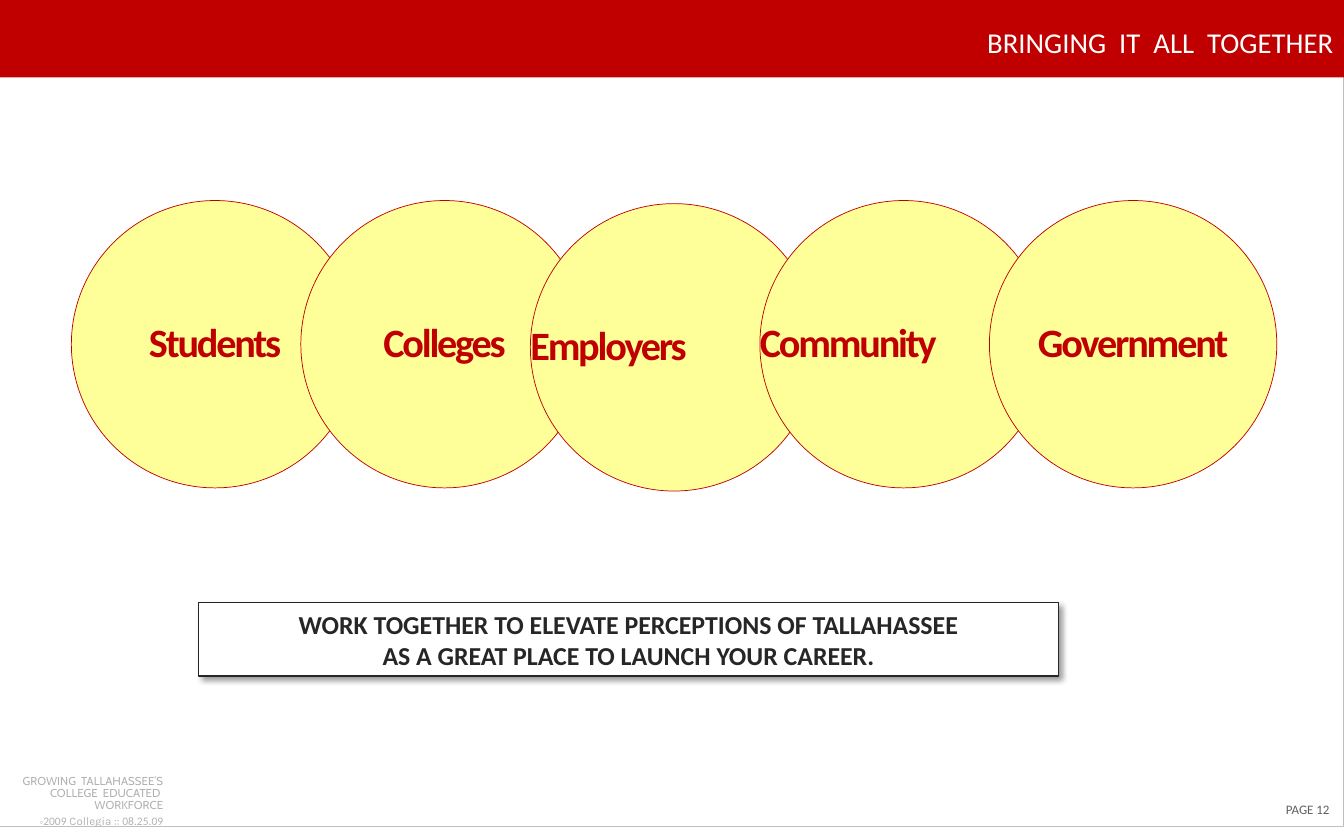
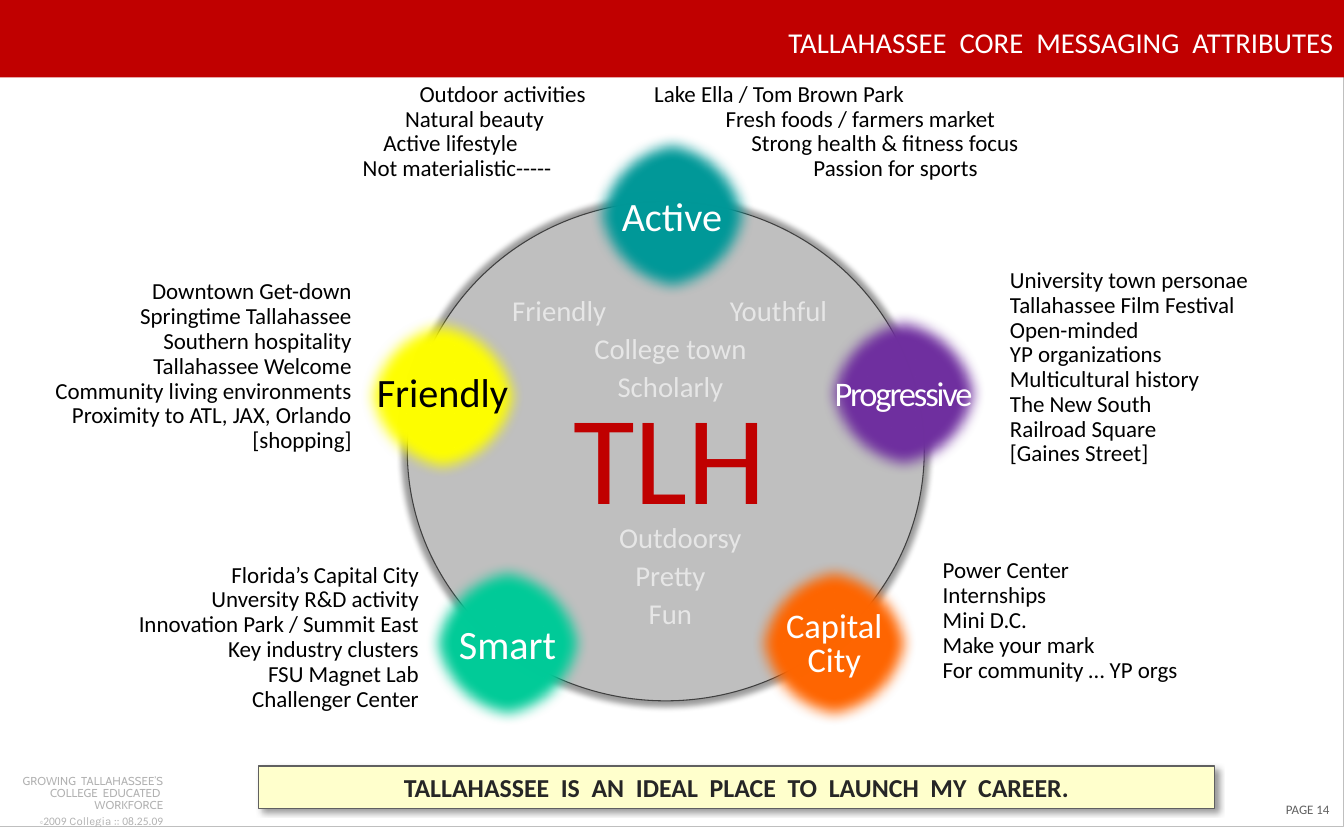
from dataclasses import dataclass

from lxml import etree
from pptx import Presentation
from pptx.dml import color
from pptx.enum import shapes, text
from pptx.oxml import ns
from pptx.util import Inches, Pt


@dataclass(frozen=True)
class Theme:
    font: str = "Calibri"
    red: str = "C00000"
    white: str = "FFFFFF"
    black: str = "000000"
    dark: str = "262626"
    outline: str = "404040"
    grey: str = "606060"
    footer: str = "B2B2B2"
    disc: str = "BFBFBF"
    pale: str = "E6E6E6"
    yellow: str = "FFFF99"
    cream: str = "FFFFCC"
    title_size: int = 20
    large: int = 28
    medium: int = 24
    banner: int = 18
    body: int = 16
    hero: int = 88
    page: int = 9
    small: int = 8
    tiny: int = 6


THEME = Theme()
LEFT, CENTER, RIGHT = text.PP_ALIGN.LEFT, text.PP_ALIGN.CENTER, text.PP_ALIGN.RIGHT
OVAL, RECTANGLE = shapes.MSO_SHAPE.OVAL, shapes.MSO_SHAPE.RECTANGLE
WIDTH, HEIGHT = 13, 8
BAND_HEIGHT = 0.75
CIRCLE_SIZE, CIRCLE_LEFT, CIRCLE_PITCH = 2.78, 0.69, 2.22
BALL_SIZE = 1.6

FOOTER_TITLE = "GROWING  TALLAHASSEE’S COLLEGE  EDUCATED  WORKFORCE"
FOOTER_CREDIT = [
    ("©", "Karla", THEME.tiny, {"baseline": 9000}),
    ("2009", THEME.font, THEME.small, {}),
    (" Collegia :: ", "Karla", THEME.small, {}),
    ("08.25.09", THEME.font, THEME.small, {}),
]

PARTNERS = [
    ("Students", 1.94, CENTER),
    ("Colleges", 1.94, CENTER),
    ("Employers", 1.97, LEFT),
    ("Community", 1.94, LEFT),
    ("Government", 1.94, CENTER),
]
PARTNER_BANNER = [
    "WORK TOGETHER TO ELEVATE PERCEPTIONS OF TALLAHASSEE",
    "AS A GREAT PLACE TO LAUNCH YOUR CAREER.",
]

ATTRIBUTE_LISTS = [
    ((9.67, 2.55, 2.58, 2.1), LEFT, [
        "University town personae", "Tallahassee Film Festival", "Open-minded",
        "YP organizations", "Multicultural history", "The New South",
        "Railroad Square", "[Gaines Street]"]),
    ((0.25, 2.66, 3.25, 1.85), RIGHT, [
        "Downtown Get-down", "Springtime Tallahassee", "Southern hospitality",
        "Tallahassee Welcome", "Community living environments",
        "Proximity to ATL, JAX, Orlando", "[shopping]"]),
    ((9.02, 5.36, 3.08, 1.31), LEFT, [
        "Power Center", "Internships", "Mini D.C.", "Make your mark",
        "For community … YP orgs"]),
    ((3.07, 0.75, 3.08, 1.07), LEFT, [
        ("Outdoor activities", 0.89), ("Natural beauty", 0.75),
        ("Active lifestyle", 0.54), ("Not materialistic-----", 0.34)]),
    ((6.23, 0.75, 4.27, 1.07), LEFT, [
        "Lake Ella / Tom Brown Park", ("Fresh foods / farmers market", 0.69),
        ("Strong health & fitness focus", 0.94), ("Passion for sports", 1.54)]),
    ((1.07, 5.4, 3.08, 1.6), RIGHT, [
        "Florida’s Capital City", "Unversity R&D activity",
        "Innovation Park / Summit East", "Key industry clusters",
        "FSU Magnet Lab", "Challenger Center"]),
]

BALLS = [
    (3.48, 3.03, "FFFF00", ["Friendly"], THEME.black, THEME.large, 0, 0.05),
    (7.94, 3.0, "7030A0", ["Progressive"], THEME.white, THEME.medium, -150, 0.05),
    (5.7, 1.28, "009999", ["Active"], THEME.white, THEME.large, 0, 0.05),
    (4.11, 5.42, "00CC99", ["Smart"], THEME.white, THEME.large, 0, 0.05),
    (7.27, 5.42, "FF6600", ["Capital", "City"], THEME.white, THEME.medium, 0, 0.1),
]

INNER_PAIR = "\tFriendly\tYouthful"
INNER_PAIR_STOPS = (2.65, 4.77)
INNER_WORDS = [
    (2.75, [INNER_PAIR, "College town", "Scholarly"]),
    (4.95, [("Outdoorsy", 0.19), "Pretty", "Fun"]),
]


def rgb(value):
    return color.RGBColor.from_string(value)


def add_run(paragraph, words, size, ink, font=THEME.font, bold=False, **attributes):
    run = paragraph.add_run()
    run.text = words
    run.font.name = font
    run.font.size = Pt(size)
    run.font.bold = bold
    run.font.color.rgb = rgb(ink)
    for name, value in attributes.items():
        run._r.get_or_add_rPr().set(name, str(value))


def set_frame(frame, insets=(0.1, 0.05, 0.1, 0.05), anchor=text.MSO_ANCHOR.TOP, wrap=True):
    frame.margin_left, frame.margin_top, frame.margin_right, frame.margin_bottom = map(Inches, insets)
    frame.vertical_anchor = anchor
    frame.word_wrap = wrap
    frame.auto_size = text.MSO_AUTO_SIZE.NONE


def write(frame, lines, size, ink, align=LEFT, spacing=1.0, **style):
    for index, line in enumerate(lines):
        words, indent = line if isinstance(line, tuple) else (line, 0)
        paragraph = frame.paragraphs[0] if index == 0 else frame.add_paragraph()
        paragraph.alignment = align
        paragraph.line_spacing = spacing
        if indent:
            paragraph._p.get_or_add_pPr().set("marL", str(Inches(indent)))
        add_run(paragraph, words, size, ink, **style)


def add_box(slide, place):
    return slide.shapes.add_textbox(*map(Inches, place)).text_frame


def add_figure(slide, preset, place, fill, line, width):
    shape = slide.shapes.add_shape(preset, *map(Inches, place))
    shape.shadow.inherit = False
    if fill:
        shape.fill.solid()
        shape.fill.fore_color.rgb = rgb(fill)
    else:
        shape.fill.background()
    if line:
        shape.line.color.rgb = rgb(line)
        shape.line.width = Pt(width)
    else:
        shape.line.fill.background()
    return shape


def add_effect(shape, kind, alpha=None, **attributes):
    effects = shape.element.spPr.find(ns.qn("a:effectLst"))
    values = {name: str(value) for name, value in attributes.items()}
    effect = etree.SubElement(effects, ns.qn("a:" + kind), values)
    if alpha:
        ink = etree.SubElement(effect, ns.qn("a:srgbClr"), val=THEME.black)
        etree.SubElement(ink, ns.qn("a:alpha"), val=str(alpha * 1000))


def add_banner(slide, place, fill, line, lines):
    banner = add_figure(slide, RECTANGLE, place, fill, line, 0.75)
    add_effect(banner, "outerShdw", alpha=40, blurRad=Pt(4), dist=Pt(3),
               dir=45 * 60000, algn="tl", rotWithShape=0)
    set_frame(banner.text_frame, anchor=text.MSO_ANCHOR.MIDDLE)
    write(banner.text_frame, lines, THEME.banner, THEME.dark, CENTER, bold=True)


def build_layout(slide):
    existing = len(slide.shapes)
    add_figure(slide, RECTANGLE, (0, 0, WIDTH, HEIGHT), None, THEME.disc, 0.75)
    add_figure(slide, RECTANGLE, (0, 0, WIDTH, BAND_HEIGHT), THEME.red, None, 0)
    footer = add_box(slide, (0, 7.45, 1.58, 0.51))
    set_frame(footer, (0, 0.05, 0, 0.05))
    write(footer, [FOOTER_TITLE], THEME.small, THEME.footer, RIGHT, 0.9, font="Cabin")
    credit = footer.add_paragraph()
    credit.alignment = RIGHT
    credit.line_spacing = 0.9
    credit.space_before = Pt(2.4)
    for words, font, size, attributes in FOOTER_CREDIT:
        add_run(credit, words, size, THEME.footer, font, **attributes)
    for shape in list(slide.shapes)[existing:]:
        slide.slide_layout.shapes.element.append(shape.element)


def start_slide(presentation, title, page):
    slide = presentation.slides.add_slide(presentation.slide_layouts[5])
    if len(presentation.slides) == 1:
        build_layout(slide)
    heading = slide.shapes.title
    heading.left, heading.top, heading.width, heading.height = map(Inches, (3.29, 0.13, 9.71, 0.55))
    set_frame(heading.text_frame, anchor=text.MSO_ANCHOR.MIDDLE)
    write(heading.text_frame, [title], THEME.title_size, THEME.white, RIGHT)
    number = add_box(slide, (12.34, 7.7, 0.74, 0.25))
    set_frame(number, wrap=False)
    write(number, [f"PAGE {page}"], THEME.page, THEME.grey)
    return slide


def build_partners(presentation):
    slide = start_slide(presentation, "BRINGING  IT  ALL  TOGETHER", 12)
    for index, (name, top, align) in enumerate(PARTNERS):
        place = (CIRCLE_LEFT + index * CIRCLE_PITCH, top, CIRCLE_SIZE, CIRCLE_SIZE)
        add_figure(slide, OVAL, place, THEME.yellow, THEME.red, 0.5)
        label = add_box(slide, place)
        set_frame(label, (0, 0.04, 0, 0.04), text.MSO_ANCHOR.MIDDLE)
        write(label, [name], THEME.large, THEME.red, align, 0.9, bold=True, spc=-150)
    add_banner(slide, (1.92, 5.83, 8.32, 0.71), THEME.white, THEME.dark, PARTNER_BANNER)


def build_attributes(presentation):
    slide = start_slide(presentation, "TALLAHASSEE  CORE  MESSAGING  ATTRIBUTES", 14)
    disc = add_figure(slide, OVAL, (3.94, 1.95, 5, 4.83), THEME.disc, THEME.outline, 0.75)
    add_effect(disc, "outerShdw", alpha=40, blurRad=Pt(4), sx=102000, sy=102000,
               algn="ctr", rotWithShape=0)

    for place, align, lines in ATTRIBUTE_LISTS:
        frame = add_box(slide, place)
        set_frame(frame)
        write(frame, lines, THEME.body, THEME.black, align, 0.9)

    for left, top, fill, lines, ink, size, tracking, inset in BALLS:
        ball = add_figure(slide, OVAL, (left, top, BALL_SIZE, BALL_SIZE), fill, THEME.white, 2.25)
        add_effect(ball, "softEdge", rad=Pt(10))
        set_frame(ball.text_frame, (0.1, inset, 0.1, 0.05), text.MSO_ANCHOR.MIDDLE, False)
        spacing = 0.8 if len(lines) > 1 or lines == ["Friendly"] else 1.0
        write(ball.text_frame, lines, size, ink, CENTER, spacing, spc=tracking)

    hero = add_box(slide, (5.19, 3.61, 2.58, 1.58))
    set_frame(hero)
    write(hero, ["TLH"], THEME.hero, THEME.red, CENTER)

    for top, lines in INNER_WORDS:
        frame = add_box(slide, (2.71, top, 7.5, 1.25))
        set_frame(frame, (0.05, 0.05, 0, 0.05))
        write(frame, lines, THEME.title_size, THEME.pale, CENTER, 1.1)
        if lines[0] == INNER_PAIR:
            pair = frame.paragraphs[0]
            pair.alignment = LEFT
            tabs = etree.SubElement(pair._p.get_or_add_pPr(), ns.qn("a:tabLst"))
            for stop in INNER_PAIR_STOPS:
                etree.SubElement(tabs, ns.qn("a:tab"), pos=str(Inches(stop)), algn="ctr")

    add_banner(slide, (2.5, 7.41, 9.25, 0.41), THEME.cream, THEME.grey,
               ["TALLAHASSEE  IS  AN  IDEAL  PLACE  TO  LAUNCH  MY  CAREER."])


def main():
    presentation = Presentation()
    presentation.slide_width, presentation.slide_height = Inches(WIDTH), Inches(HEIGHT)
    build_partners(presentation)
    build_attributes(presentation)
    presentation.save("out.pptx")


if __name__ == "__main__":
    main()
